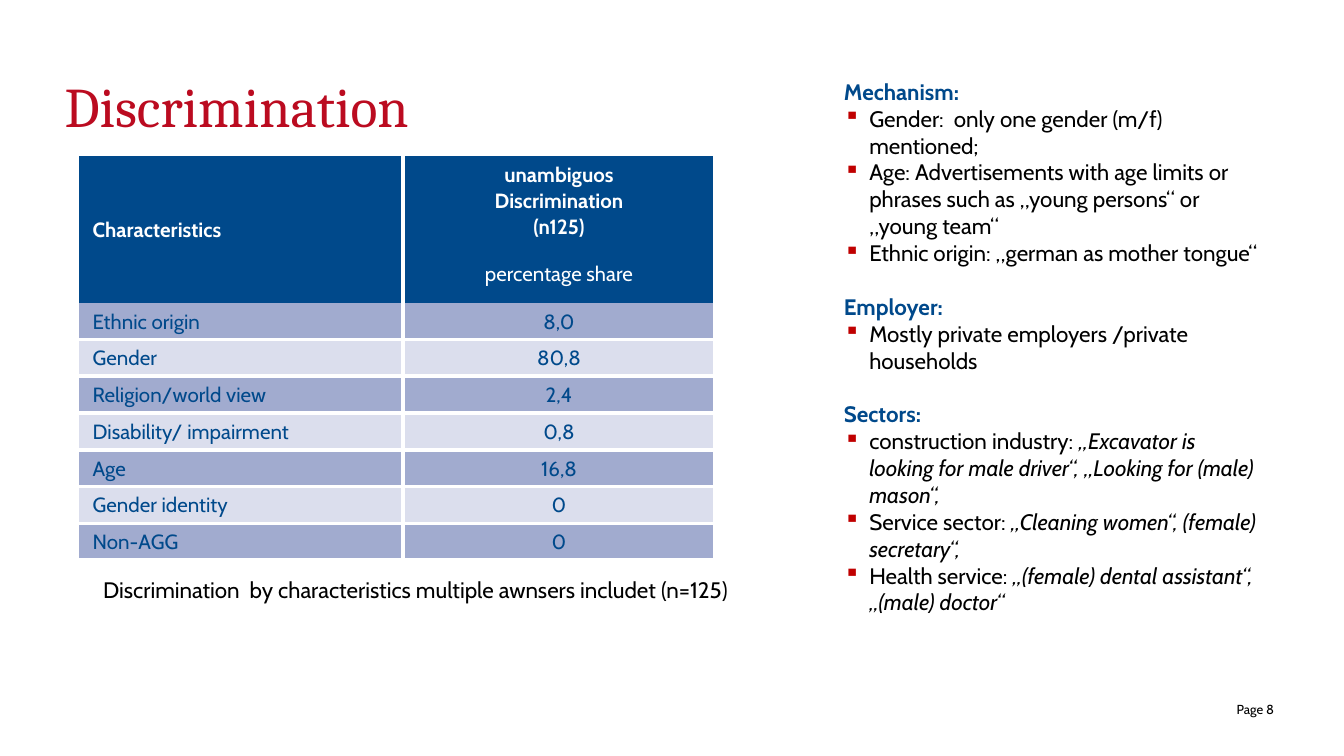
import pptx
import pptx.dml.color
import pptx.enum.text
import pptx.oxml
import pptx.oxml.ns
import pptx.util
from lxml import etree

Cm = pptx.util.Cm
Pt = pptx.util.Pt
RGB = pptx.dml.color.RGBColor
ALIGN = pptx.enum.text.PP_ALIGN
ANCHOR = pptx.enum.text.MSO_ANCHOR
FIT = pptx.enum.text.MSO_AUTO_SIZE
qn = pptx.oxml.ns.qn

RED = RGB(0xBB, 0x0B, 0x20)
MARK = RGB(0xC0, 0x00, 0x00)
BLUE = RGB(0x00, 0x49, 0x8B)
DARK = RGB(0xA1, 0xAB, 0xCF)
LIGHT = RGB(0xDB, 0xDE, 0xED)
WHITE = RGB(0xFF, 0xFF, 0xFF)
BLACK = RGB(0x00, 0x00, 0x00)

PLAIN = "{2D5ABB26-0587-4C30-8999-92F81FD0307C}"  # table style without grid

ROWS = [
    ("Ethnic origin", "8,0"),
    ("Gender", "80,8"),
    ("Religion/world view", "2,4"),
    ("Disability/ impairment", "0,8"),
    ("Age", "16,8"),
    ("Gender identity", "0"),
    ("Non-AGG", "0"),
]

# Heading, then bullets as (plain part, italic part)
NOTES = [
    ("Mechanism:", [
        ("Gender:  only one gender (m/f) mentioned;", ""),
        ("Age: Advertisements with age limits or phrases such as "
         "„young persons“ or „young team“", ""),
        ("Ethnic origin: „german as mother tongue“", ""),
    ]),
    ("Employer:", [
        ("Mostly private employers /private households", ""),
    ]),
    ("Sectors:", [
        ("construction industry: ",
         "„Excavator is looking for male driver“, "
         "„Looking for (male) mason“,"),
        ("Service sector: ", "„Cleaning women“, (female) secretary“,"),
        ("Health service: ",
         "„(female) dental assistant“, „(male) doctor“"),
    ]),
]


class Deck:
    font = "Cabin"

    def __init__(self):
        self.prs = pptx.Presentation()
        self.prs.slide_width = Cm(25.4)
        self.prs.slide_height = Cm(14.29)
        self.slide = self.prs.slides.add_slide(self.prs.slide_layouts[5])

    def style(self, para, size, color, bold=False, name=None):
        font = para.font
        font.name = name or self.font
        font.size = Pt(size)
        font.bold = bold
        font.color.rgb = color

    def title(self, text, x, y, w, h):
        box = self.slide.shapes.title
        box.left, box.top, box.width, box.height = Cm(x), Cm(y), Cm(w), Cm(h)
        frame = box.text_frame
        frame.text = text
        frame.auto_size = FIT.NONE
        frame.vertical_anchor = ANCHOR.TOP
        frame.margin_left = frame.margin_right = 0
        frame.margin_top = frame.margin_bottom = 0
        para = frame.paragraphs[0]
        para.alignment = ALIGN.LEFT
        self.style(para, 30, RED, name="Cambria")

    def frame(self, x, y, w, h):
        box = self.slide.shapes.add_textbox(Cm(x), Cm(y), Cm(w), Cm(h))
        box.text_frame.word_wrap = True
        return box.text_frame

    def label(self, text, x, y, w, h, size):
        frame = self.frame(x, y, w, h)
        para = frame.paragraphs[0]
        para.text = text
        self.style(para, size, BLACK)
        return frame

    def bullet(self, para):
        props = para._p.get_or_add_pPr()
        props.set("marL", str(Cm(0.48)))
        props.set("indent", str(-Cm(0.48)))
        color = etree.SubElement(props, qn("a:buClr"))
        etree.SubElement(color, qn("a:srgbClr"), val=str(MARK))
        etree.SubElement(props, qn("a:buChar"), char="▪")

    def notes(self, groups, x, y, w, h):
        frame = self.frame(x, y, w, h)
        for i, (head, items) in enumerate(groups):
            para = frame.add_paragraph() if i else frame.paragraphs[0]
            para.text = head
            if i:
                para.space_before = Pt(14.4)
            self.style(para, 12, BLUE, bold=True)
            for plain, quote in items:
                para = frame.add_paragraph()
                self.bullet(para)
                self.style(para, 12, BLACK)
                para.add_run().text = plain
                if quote:
                    run = para.add_run()
                    run.text = quote
                    run.font.italic = True

    def border(self, cell, sides):
        props = cell._tc.get_or_add_tcPr()
        for i, side in enumerate(sides):
            line = etree.Element(qn("a:ln" + side), w=str(Pt(2.25)))
            fill = etree.SubElement(line, qn("a:solidFill"))
            etree.SubElement(fill, qn("a:srgbClr"), val=str(WHITE))
            props.insert(i, line)  # borders come before the fill

    def cell(self, cell, text, fill, color, align, sides, bold=False):
        cell.text = text
        cell.margin_left = Cm(0.25) if align != ALIGN.CENTER else 0
        cell.margin_right = 0
        cell.margin_top = cell.margin_bottom = Cm(0.1)
        cell.vertical_anchor = ANCHOR.MIDDLE
        cell.fill.solid()
        cell.fill.fore_color.rgb = fill
        self.border(cell, sides)
        para = cell.text_frame.paragraphs[0]
        para.alignment = align
        para.line_spacing = Pt(14)
        self.style(para, 11, color, bold)

    def table(self, rows, x, y, widths, heights):
        shape = self.slide.shapes.add_table(
            len(heights), len(widths), Cm(x), Cm(y),
            Cm(sum(widths)), Cm(sum(heights)))
        grid = shape.table
        grid._tbl.tblPr.find(qn("a:tableStyleId")).text = PLAIN
        grid.first_row = grid.horz_banding = False
        for col, width in zip(grid.columns, widths):
            col.width = Cm(width)
        for row, height in zip(grid.rows, heights):
            row.height = Cm(height)

        # Header over two rows
        grid.cell(0, 0).merge(grid.cell(1, 0))
        self.cell(grid.cell(0, 0), "Characteristics", BLUE, WHITE,
                  ALIGN.JUSTIFY, "R", bold=True)
        self.cell(grid.cell(0, 1), "unambiguos\vDiscrimination\v(n125)",
                  BLUE, WHITE, ALIGN.CENTER, "LR", bold=True)
        self.cell(grid.cell(1, 1), "percentage share", BLUE, WHITE,
                  ALIGN.CENTER, "LR")

        # Banded body
        for i, (name, share) in enumerate(rows):
            fill = LIGHT if i % 2 else DARK
            edge = "TB" if i else "B"
            self.cell(grid.cell(i + 2, 0), name, fill, BLUE,
                      ALIGN.LEFT, "R" + edge)
            self.cell(grid.cell(i + 2, 1), share, fill, BLUE,
                      ALIGN.CENTER, "LR" + edge)


def main():
    deck = Deck()
    deck.title("Discrimination", 1.22, 1.35, 22.8, 1.6)

    # Table and caption
    deck.table(ROWS, 1.5, 2.95, [6.12, 5.89],
               [1.68, 1.09] + [0.69] * len(ROWS))
    deck.label("Discrimination  by characteristics multiple awnsers "
               "includet (n=125)", 1.7, 10.77, 13.8, 0.77, 12)

    # Side notes
    deck.notes(NOTES, 15.7, 1.35, 8.4, 10)

    # Page number
    page = deck.label("Page 8", 21.54, 13.13, 2.54, 0.41, 7)
    page.margin_left = page.margin_right = page.margin_bottom = 0
    page.paragraphs[0].alignment = ALIGN.RIGHT

    deck.prs.save("out.pptx")


if __name__ == "__main__":
    main()
